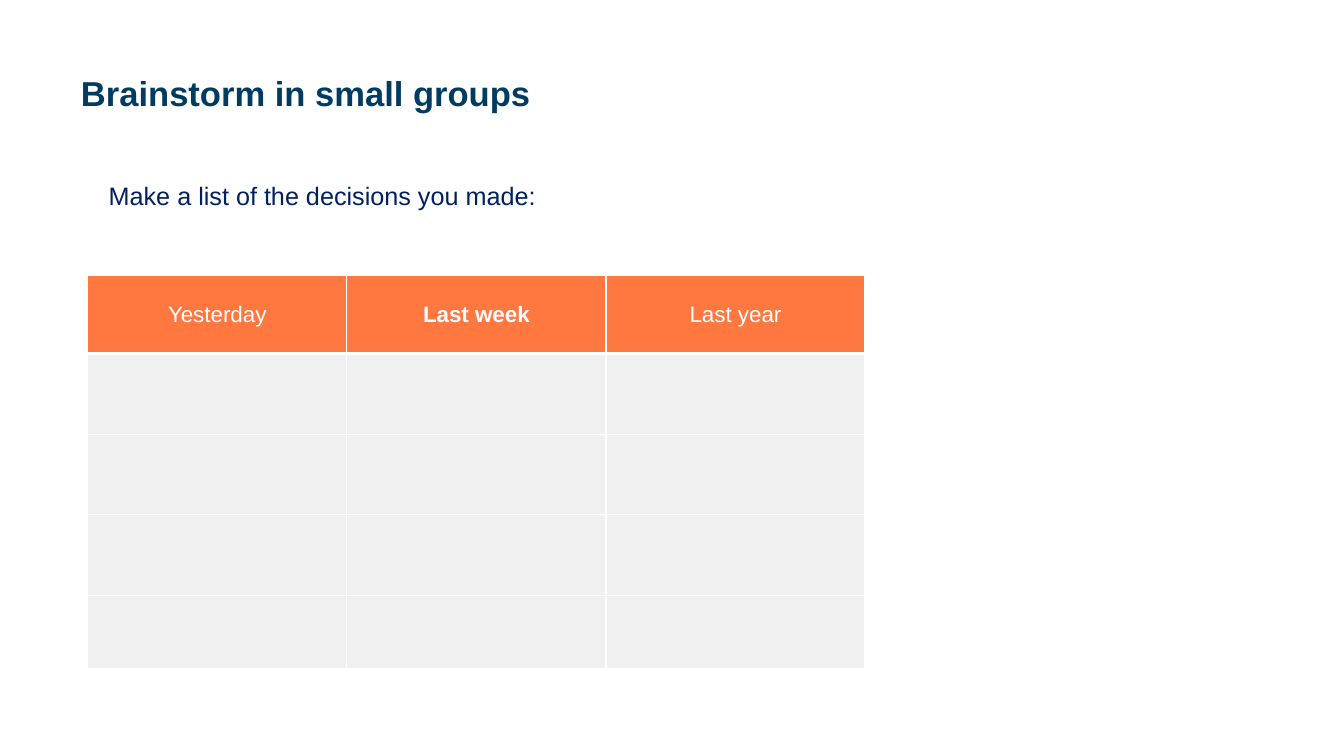
"""Build the slide with a decision table for brainstorming in small groups."""
import dataclasses

import lxml.etree
import pptx
import pptx.dml.color
import pptx.enum.text
import pptx.oxml.ns
import pptx.util

Cm, Pt = pptx.util.Cm, pptx.util.Pt
PP_ALIGN = pptx.enum.text.PP_ALIGN
MSO_ANCHOR = pptx.enum.text.MSO_ANCHOR
qn = pptx.oxml.ns.qn


@dataclasses.dataclass(frozen=True)
class Theme:
    font: str = "Arial"
    title: str = "003B61"
    body: str = "002060"
    header: str = "FF7840"
    cell: str = "F0F0F0"
    white: str = "FFFFFF"
    title_size: float = 24.7
    body_size: float = 18
    header_size: float = 16
    line: float = 1
    heavy_line: float = 3


theme = Theme()


def add_run(p, text, size, color, bold=False):
    r = p.add_run()
    r.text = text
    r.font.name = theme.font
    r.font.size = Pt(size)
    r.font.bold = bold
    r.font.color.rgb = pptx.dml.color.RGBColor.from_string(color)


def set_borders(cell, widths):
    tcPr = cell._tc.get_or_add_tcPr()
    for i, (side, width) in enumerate(widths.items()):
        ln = lxml.etree.Element(qn(f"a:ln{side}"), w=str(int(Pt(width))))
        fill = lxml.etree.SubElement(ln, qn("a:solidFill"))
        lxml.etree.SubElement(fill, qn("a:srgbClr"), val=theme.white)
        tcPr.insert(i, ln)


prs = pptx.Presentation()
prs.slide_width, prs.slide_height = Cm(33.87), Cm(19.05)
s = prs.slides.add_slide(prs.slide_layouts[1])
title, body = s.placeholders

texts = [
    (title, (1.7, 0.74, 30.48, 3.18), (0.34, 0.17), MSO_ANCHOR.MIDDLE,
     "Brainstorm in small groups", theme.title_size, theme.title, True),
    (body, (2.49, 4.29, 15.8, 1.85), (0.25, 0.25), MSO_ANCHOR.TOP,
     "Make a list of the decisions you made:", theme.body_size, theme.body, False),
]
for sp, box, (inset_x, inset_y), anchor, text, size, color, bold in texts:
    sp.left, sp.top, sp.width, sp.height = map(Cm, box)
    tf = sp.text_frame
    tf.word_wrap = True
    tf.auto_size = pptx.enum.text.MSO_AUTO_SIZE.NONE
    tf.vertical_anchor = anchor
    tf.margin_left = tf.margin_right = Cm(inset_x)
    tf.margin_top = tf.margin_bottom = Cm(inset_y)
    p = tf.paragraphs[0]
    p.alignment = PP_ALIGN.LEFT
    p.space_before = Pt(0)
    pPr = p._p.get_or_add_pPr()
    pPr.set("marL", "0")
    pPr.set("indent", "0")
    lxml.etree.SubElement(pPr, qn("a:buNone"))
    add_run(p, text, size, color, bold)

headers = [("Yesterday", False), ("Last week", True), ("Last year", False)]
row_heights = [1.98, 2.03, 2.03, 2.03, 1.85]
column_width = 6.53
table = s.shapes.add_table(
    len(row_heights), len(headers), Cm(2.21), Cm(6.93),
    Cm(column_width * len(headers)), Cm(sum(row_heights))).table
table.horz_banding = False
for column in table.columns:
    column.width = Cm(column_width)
for i, height in enumerate(row_heights):
    table.rows[i].height = Cm(height)
    for j, (label, bold) in enumerate(headers):
        cell = table.cell(i, j)
        cell.vertical_anchor = MSO_ANCHOR.MIDDLE
        cell.fill.solid()
        cell.fill.fore_color.rgb = pptx.dml.color.RGBColor.from_string(
            theme.cell if i else theme.header)
        set_borders(cell, {
            "L": theme.line,
            "R": theme.line,
            "T": theme.heavy_line if i == 1 else theme.line,
            "B": theme.heavy_line if i == 0 else theme.line,
        })
        if i == 0:
            p = cell.text_frame.paragraphs[0]
            p.alignment = PP_ALIGN.CENTER
            add_run(p, label, theme.header_size, theme.white, bold)

prs.save("out.pptx")
